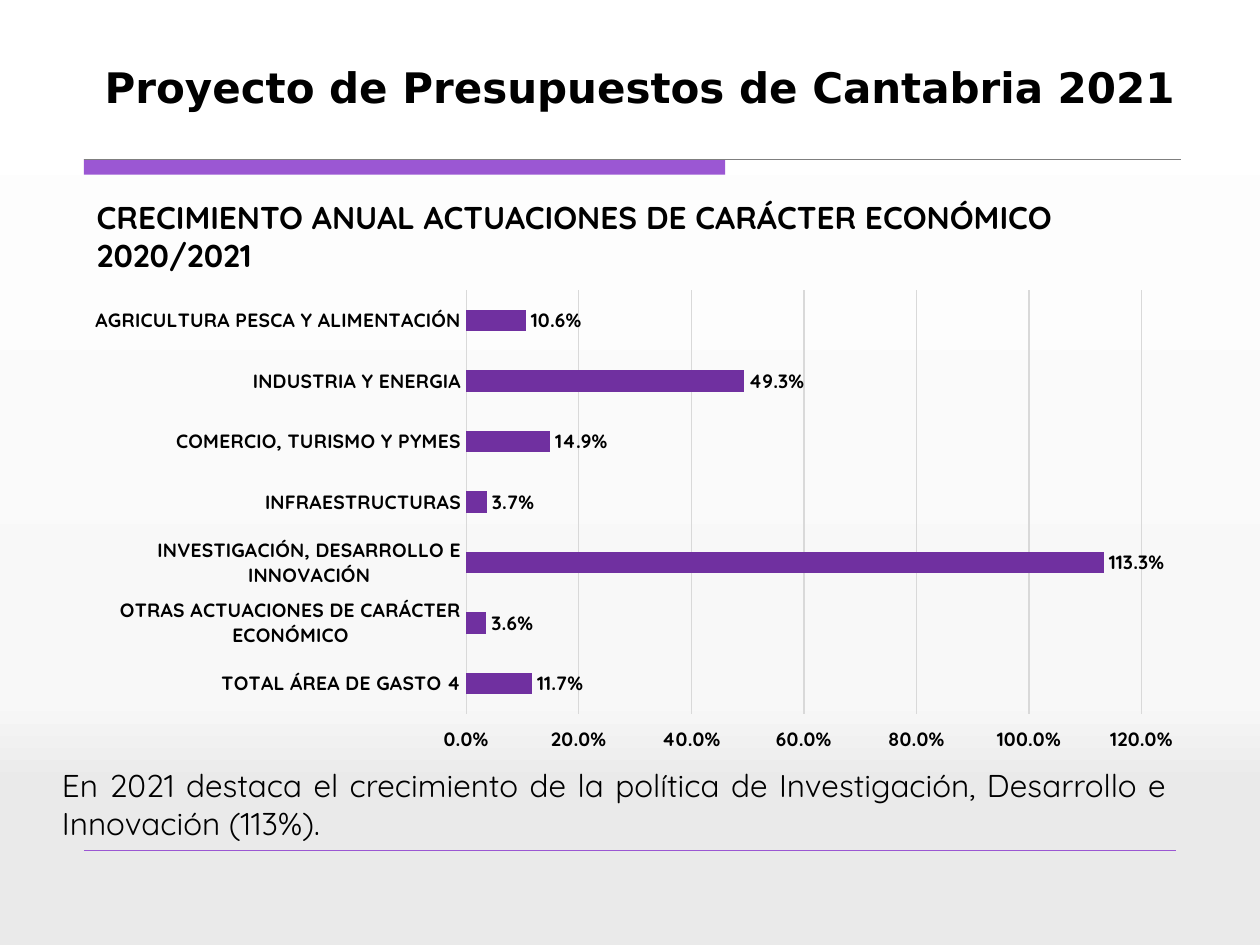
"""Build the slide on growth in economic spending, Cantabria 2021."""
from lxml import etree
from pptx import Presentation
from pptx.chart.data import CategoryChartData
from pptx.dml.color import RGBColor
from pptx.enum.chart import (XL_CHART_TYPE, XL_LABEL_POSITION, XL_TICK_LABEL_POSITION,
                             XL_TICK_MARK)
from pptx.enum.shapes import MSO_CONNECTOR, MSO_SHAPE
from pptx.enum.text import PP_ALIGN
from pptx.oxml.ns import qn
from pptx.util import Cm, Pt

BAR_CLUSTERED = XL_CHART_TYPE.BAR_CLUSTERED
OUTSIDE_END = XL_LABEL_POSITION.OUTSIDE_END
HIGH = XL_TICK_LABEL_POSITION.HIGH
NO_TICK = XL_TICK_MARK.NONE
RECTANGLE = MSO_SHAPE.RECTANGLE
STRAIGHT = MSO_CONNECTOR.STRAIGHT
LEFT, CENTER, JUSTIFY = PP_ALIGN.LEFT, PP_ALIGN.CENTER, PP_ALIGN.JUSTIFY

BLACK = RGBColor(0x00, 0x00, 0x00)
LILAC = RGBColor(0x9B, 0x57, 0xD3)
PURPLE = RGBColor(0x70, 0x30, 0xA0)
GRAY = RGBColor(0x7F, 0x7F, 0x7F)
PALE_GRAY = RGBColor(0xD9, 0xD9, 0xD9)
WHITE = RGBColor(0xFF, 0xFF, 0xFF)
OFF_WHITE = RGBColor(0xF8, 0xF8, 0xF8)
MIST = RGBColor(0xEA, 0xEA, 0xEA)

BACKGROUND_STOPS = [(0, WHITE), (74, OFF_WHITE), (83, MIST), (100, MIST)]
GROWTH = {
    "AGRICULTURA PESCA Y ALIMENTACIÓN": 0.106,
    "INDUSTRIA Y ENERGIA": 0.493,
    "COMERCIO, TURISMO Y PYMES": 0.149,
    "INFRAESTRUCTURAS": 0.037,
    "INVESTIGACIÓN, DESARROLLO E INNOVACIÓN": 1.133,
    "OTRAS ACTUACIONES DE CARÁCTER ECONÓMICO": 0.036,
    "TOTAL ÁREA DE GASTO 4": 0.117,
}


class SlideBuilder:
    """Hold the style and the current slide."""

    body_font = "Quicksand"
    title_font = "DejaVu Sans"
    percent = "0.0%"

    def __init__(self, page):
        self.page = page

    def background(self, stops):
        fill = self.page.background.fill
        fill.gradient()
        fill.gradient_angle = 270
        stop_list = self.page.element.find(".//" + qn("a:gsLst"))
        for stop in list(stop_list):
            stop_list.remove(stop)
        for percent, color in stops:
            stop = etree.SubElement(stop_list, qn("a:gs"), pos=str(percent * 1000))
            etree.SubElement(stop, qn("a:srgbClr"), val=str(color))

    def bar(self, left, top, width, height, color):
        shape = self.page.shapes.add_shape(
            RECTANGLE, Cm(left), Cm(top), Cm(width), Cm(height))
        shape.shadow.inherit = False
        shape.fill.solid()
        shape.fill.fore_color.rgb = color
        shape.line.fill.background()

    def rule(self, left, right, top, color, weight):
        line = self.page.shapes.add_connector(
            STRAIGHT, Cm(left), Cm(top), Cm(right), Cm(top))
        line.line.color.rgb = color
        line.line.width = Pt(weight)
        etree.SubElement(line.element.spPr, qn("a:effectLst"))

    def text(self, left, top, width, height, words, size=18, bold=False,
             align=LEFT, font=body_font):
        box = self.page.shapes.add_textbox(Cm(left), Cm(top), Cm(width), Cm(height))
        box.text_frame.word_wrap = True
        para = box.text_frame.paragraphs[0]
        para.text = words
        para.alignment = align
        para.font.name = font
        self.style(para.font, size, bold)

    def style(self, font, size, bold):
        font.size = Pt(size)
        font.bold = bold
        font.color.rgb = BLACK

    def chart_font(self, font):
        font.name = self.body_font
        self.style(font, 11, True)

    def bar_chart(self, left, top, width, height, values):
        data = CategoryChartData(number_format=self.percent)
        data.categories = list(values)
        data.add_series("Series 1", list(values.values()))
        chart = self.page.shapes.add_chart(
            BAR_CLUSTERED, Cm(left), Cm(top), Cm(width), Cm(height), data).chart
        chart.has_legend = False
        chart.has_title = False
        self.chart_font(chart.font)

        plot = chart.plots[0]
        plot.gap_width = 182
        plot.vary_by_categories = False
        series = plot.series[0]
        series.format.fill.solid()
        series.format.fill.fore_color.rgb = PURPLE
        labels = series.data_labels
        labels.show_value = True
        labels.position = OUTSIDE_END
        labels.number_format = self.percent
        labels.number_format_is_linked = False
        self.chart_font(labels.font)

        category_axis, value_axis = chart.category_axis, chart.value_axis
        for axis in (category_axis, value_axis):
            axis.major_tick_mark = axis.minor_tick_mark = NO_TICK
            self.chart_font(axis.tick_labels.font)
        category_axis.reverse_order = True
        value_axis.tick_label_position = HIGH
        value_axis.format.line.fill.background()
        value_axis.minimum_scale, value_axis.maximum_scale = 0, 1.2
        value_axis.major_unit = 0.2
        value_axis.tick_labels.number_format = self.percent
        value_axis.tick_labels.number_format_is_linked = False
        for line in (category_axis.format.line, value_axis.major_gridlines.format.line):
            line.color.rgb = PALE_GRAY
            line.width = Pt(0.75)


def main():
    deck = Presentation()
    deck.slide_width, deck.slide_height = Cm(25.4), Cm(19.05)
    slide = SlideBuilder(deck.slides.add_slide(deck.slide_layouts[6]))
    slide.background(BACKGROUND_STOPS)
    slide.bar(1.69, 3.21, 12.93, 0.31, LILAC)
    slide.rule(1.69, 23.8, 3.21, GRAY, 0.75)
    slide.rule(1.69, 23.7, 17.14, LILAC, 0.25)
    slide.text(1.7, 1.12, 22.4, 2.82, "Proyecto de Presupuestos de Cantabria 2021",
               size=24, bold=True, align=CENTER, font=slide.title_font)
    slide.text(1.7, 3.87, 22.4, 1.8,
               "CRECIMIENTO ANUAL ACTUACIONES DE CARÁCTER ECONÓMICO 2020/2021",
               bold=True)
    slide.bar_chart(1.47, 5.66, 22.63, 9.68, GROWTH)
    slide.text(1, 15.32, 22.76, 2.57,
               "En 2021 destaca el crecimiento de la política de Investigación, "
               "Desarrollo e Innovación (113%).", align=JUSTIFY)
    deck.save("out.pptx")


if __name__ == "__main__":
    main()
